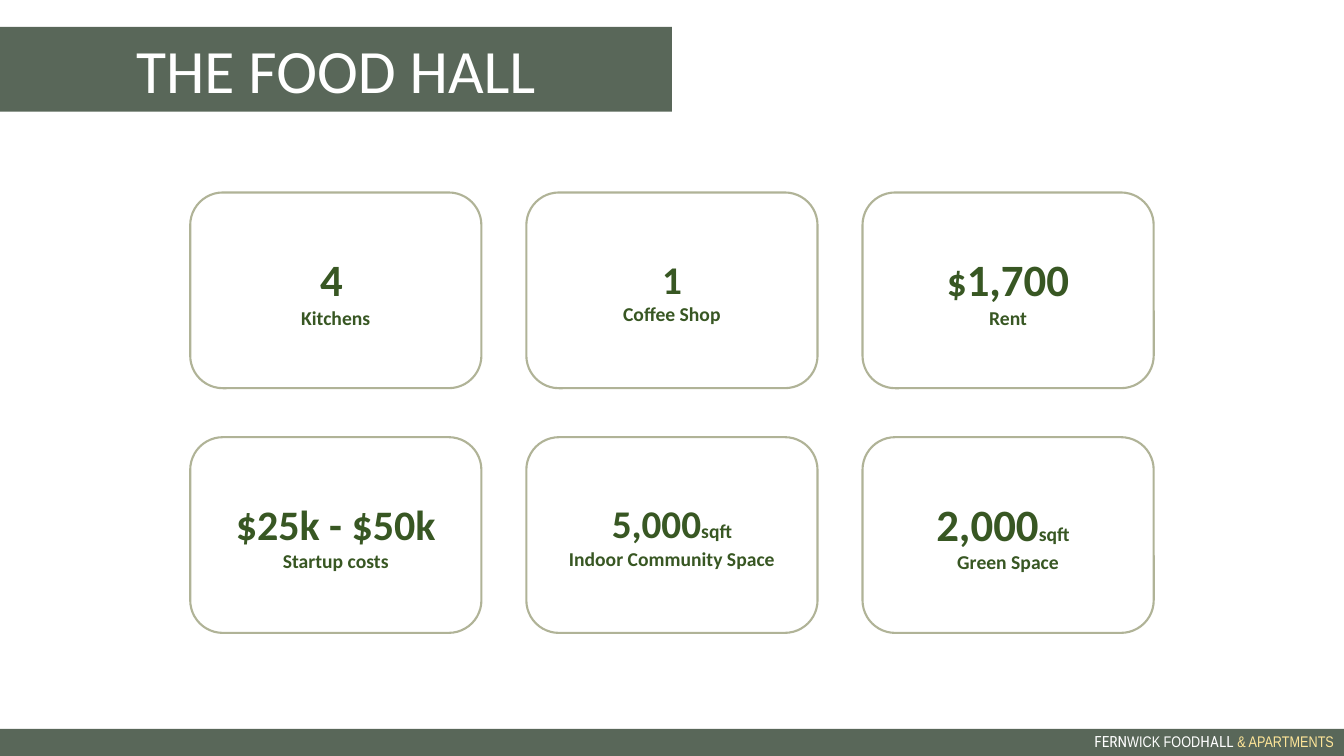
import pptx
import pptx.util
import pptx.dml.color
import pptx.enum.shapes
import pptx.enum.text

Pt = pptx.util.Pt
ALIGN = pptx.enum.text.PP_ALIGN
ANCHOR = pptx.enum.text.MSO_ANCHOR
SHAPE = pptx.enum.shapes.MSO_SHAPE

COLORS = {
    "bar": "596759",
    "card_line": "B0B397",
    "card_text": "385723",
    "white": "FFFFFF",
    "gold": "FFE699",
}

TITLE = "THE FOOD HALL"
# Each card: the runs of its figure as (text, size), then its label
CARDS = [
    ([("4", 32), (" ", 28)], "Kitchens"),
    ([("1", 28)], "Coffee Shop"),
    ([("$", 28), ("1,700", 32)], "Rent"),
    ([("$25k - $50k", 30)], "Startup costs"),
    ([("5,000", 28), ("sqft", 14)], "Indoor Community Space"),
    ([("2,000", 32), ("sqft", 14), (" ", 32)], "Green Space"),
]
FOOTER = [
    ("FERN", "Roboto Condensed", "white"),
    ("WICK FOOD", "Arial Narrow", "white"),
    ("HALL ", "Roboto Condensed", "white"),
    ("& APARTMENTS", "Arial Narrow", "gold"),
]

SLIDE_W, SLIDE_H = 960, 540
TITLE_BOX = (0, 19.2, 480, 60.6)
FOOTER_BAR = (0, 520.6, SLIDE_W, 19.4)
FOOTER_BOX = (692.6, 519.4, 267.4, 20.6)
COLUMNS = 3
CARD_W, CARD_H = 208, 139.8
CARD_TOP = 137.5
COLUMN_STEP, ROW_STEP = 240.1, 174.8
CARD_LEFT = (SLIDE_W - CARD_W - (COLUMNS - 1) * COLUMN_STEP) / 2
LABEL_SIZE = 14


def rgb(name):
    return pptx.dml.color.RGBColor.from_string(COLORS[name])


def box(left, top, width, height):
    return Pt(left), Pt(top), Pt(width), Pt(height)


def add_text(paragraph, text, size=14, font="Calibri", color="white",
             bold=False, align=ALIGN.CENTER):
    paragraph.alignment = align
    run = paragraph.add_run()
    run.text = text
    run.font.size = Pt(size)
    run.font.name = font
    run.font.bold = bold
    run.font.color.rgb = rgb(color)


def fill_bar(bar):
    bar.fill.solid()
    bar.fill.fore_color.rgb = rgb("bar")
    bar.line.fill.background()


def add_card(slide, index, figure, label):
    row, column = divmod(index, COLUMNS)
    card = slide.shapes.add_shape(
        SHAPE.ROUNDED_RECTANGLE,
        *box(CARD_LEFT + column * COLUMN_STEP, CARD_TOP + row * ROW_STEP,
             CARD_W, CARD_H))
    card.shadow.inherit = False
    card.fill.background()
    card.line.color.rgb = rgb("card_line")
    card.line.width = Pt(1.5)
    frame = card.text_frame
    frame.word_wrap = True
    frame.vertical_anchor = ANCHOR.MIDDLE
    for text, size in figure:
        add_text(frame.paragraphs[0], text, size=size, color="card_text", bold=True)
    add_text(frame.add_paragraph(), label, size=LABEL_SIZE,
             color="card_text", bold=True)


def add_title(slide):
    title = slide.shapes.title
    title.left, title.top, title.width, title.height = box(*TITLE_BOX)
    fill_bar(title)
    title.text_frame.vertical_anchor = ANCHOR.MIDDLE
    title.text_frame.auto_size = pptx.enum.text.MSO_AUTO_SIZE.NONE
    add_text(title.text_frame.paragraphs[0], TITLE, size=44)


def add_footer(slide):
    bar = slide.shapes.add_shape(SHAPE.RECTANGLE, *box(*FOOTER_BAR))
    bar.shadow.inherit = False
    fill_bar(bar)
    frame = slide.shapes.add_textbox(*box(*FOOTER_BOX)).text_frame
    frame.word_wrap = True
    for text, font, color in FOOTER:
        add_text(frame.paragraphs[0], text, size=11, font=font, color=color,
                 align=ALIGN.RIGHT)


def main():
    deck = pptx.Presentation()
    deck.slide_width, deck.slide_height = Pt(SLIDE_W), Pt(SLIDE_H)
    slide = deck.slides.add_slide(deck.slide_layouts.get_by_name("Title Only"))
    add_title(slide)
    for index, (figure, label) in enumerate(CARDS):
        add_card(slide, index, figure, label)
    add_footer(slide)
    deck.save("out.pptx")


if __name__ == "__main__":
    main()
